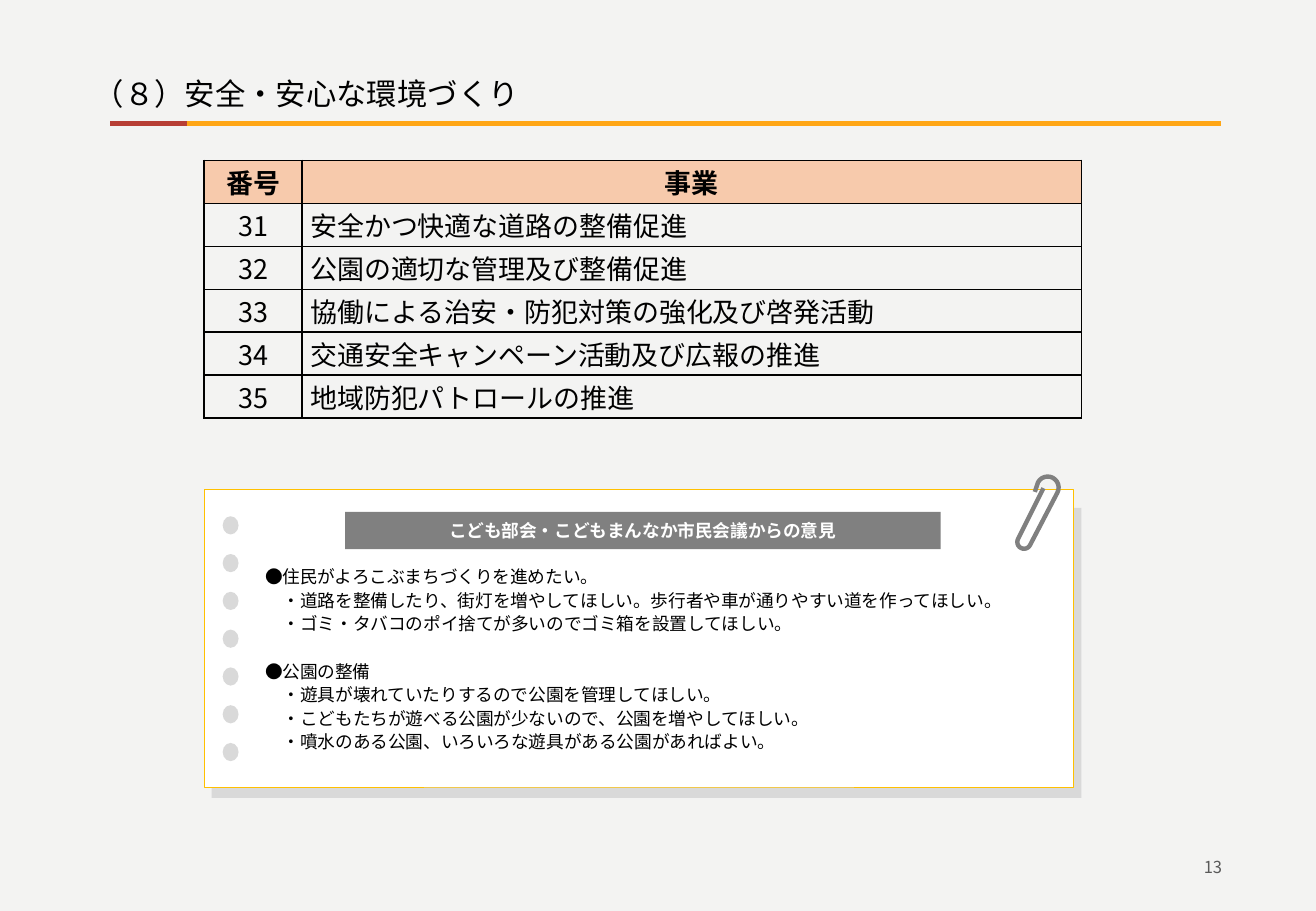
"""Build the slide on safe and secure surroundings."""
import dataclasses
import math

import lxml.etree
import pptx
import pptx.dml.color
import pptx.enum.shapes
import pptx.enum.text
import pptx.oxml.ns
import pptx.util

Pt = pptx.util.Pt
Align = pptx.enum.text.PP_ALIGN
Form = pptx.enum.shapes.MSO_SHAPE


@dataclasses.dataclass(frozen=True)
class Theme:
    back: str = "F3F3F2"
    ink: str = "000000"
    white: str = "FFFFFF"
    gray: str = "808080"
    pale: str = "D9D9D9"
    dim: str = "595959"
    peach: str = "F7CAAC"
    gold: str = "FFC000"
    amber: str = "FFA615"
    red: str = "B73E35"
    main: str = "Noto Sans CJK JP"
    latin: str = "Arial"
    label: str = "Calibri"
    title: float = 18
    table: float = 16
    body: float = 10.5
    number: float = 9.8
    leading: float = 14


def shade(code):
    return pptx.dml.color.RGBColor.from_string(code)


def apply(target, values):
    for name, value in values.items():
        setattr(target, name, value)


def child(parent, tag, **attrs):
    return lxml.etree.SubElement(parent, pptx.oxml.ns.qn(tag), attrs)


class Page:
    def __init__(self, slide, theme):
        self.slide = slide
        self.theme = theme
        self.shapes = slide.shapes
        slide.background.fill.solid()
        slide.background.fill.fore_color.rgb = shade(theme.back)

    def place(self, shape, box):
        apply(shape, dict(zip(("left", "top", "width", "height"), map(Pt, box))))

    def frame(self, frame, anchor="MIDDLE", inset=None):
        values = {"word_wrap": True,
                  "auto_size": pptx.enum.text.MSO_AUTO_SIZE.NONE,
                  "vertical_anchor": getattr(pptx.enum.text.MSO_ANCHOR, anchor)}
        if inset is not None:
            sides = ("left", "top", "right", "bottom")
            values.update({f"margin_{side}": Pt(inset) for side in sides})
        apply(frame, values)

    def text(self, para, words, size, color=None, face=None, bold=False):
        run = para.add_run()
        face = face or self.theme.main
        run.text = words
        apply(run.font, {"size": Pt(size), "bold": bold, "name": face})
        run.font.color.rgb = shade(color or self.theme.ink)
        child(run.font._element, "a:ea", typeface=face)

    def indent(self, para, left, first):
        props = para._p.get_or_add_pPr()
        props.set("marL", str(Pt(left)))
        props.set("indent", str(Pt(first)))

    def title(self, box, parts):
        holder = self.shapes.title
        self.place(holder, box)
        self.frame(holder.text_frame)
        para = holder.text_frame.paragraphs[0]
        para.alignment = Align.LEFT
        self.indent(para, 0, 10.8)
        for words, face in parts:
            self.text(para, words, self.theme.title, face=face)

    def number(self, box, words):
        frame = self.shapes.add_textbox(*map(Pt, box)).text_frame
        self.frame(frame)
        frame.paragraphs[0].alignment = Align.RIGHT
        self.text(frame.paragraphs[0], words, self.theme.number, self.theme.dim)

    def rule(self, start, end, y, color):
        kind = pptx.enum.shapes.MSO_CONNECTOR.STRAIGHT
        rule = self.shapes.add_connector(kind, *map(Pt, (start, y, end, y)))
        rule.line.color.rgb = shade(color)
        rule.line.width = Pt(3)
        child(rule._element.spPr, "a:effectLst")

    def shape(self, form, box, fill, edge=None):
        shape = self.shapes.add_shape(form, *map(Pt, box))
        shape.shadow.inherit = False
        shape.fill.solid()
        shape.fill.fore_color.rgb = shade(fill)
        if edge:
            shape.line.color.rgb = shade(edge)
            shape.line.width = Pt(0.5)
        else:
            shape.line.fill.background()
        return shape

    def banner(self, box, words):
        frame = self.shape(Form.RECTANGLE, box, self.theme.gray).text_frame
        self.frame(frame, inset=0)
        frame.paragraphs[0].alignment = Align.CENTER
        self.text(frame.paragraphs[0], words, self.theme.body,
                  self.theme.white, self.theme.label, True)

    def clip(self, tip, arcs, end):
        points = [tip]
        for x, y, radius, start in arcs:
            for step in range(13):
                angle = math.radians(start + 15 * step)
                points.append((x + radius * math.cos(angle),
                               y + radius * math.sin(angle)))
        points = [(Pt(x), Pt(y)) for x, y in points + [end]]
        maker = self.shapes.build_freeform(*points[0], scale=1)
        maker.add_line_segments(points[1:], close=False)
        wire = maker.convert_to_shape()
        wire.shadow.inherit = False
        wire.fill.background()
        wire.line.color.rgb = shade(self.theme.gray)
        wire.line.width = Pt(2.6)

    def notes(self, box, groups):
        frame = self.shapes.add_textbox(*map(Pt, box)).text_frame
        self.frame(frame, "TOP")
        lines = [(words, spot, group) for group, texts in enumerate(groups)
                 for spot, words in enumerate(texts)]
        for order, (words, spot, group) in enumerate(lines):
            para = frame.add_paragraph() if order else frame.paragraphs[0]
            lead = self.theme.leading
            gap = lead if group and not spot else 0
            apply(para, {"alignment": Align.JUSTIFY, "line_spacing": Pt(lead),
                         "space_before": Pt(gap)})
            if spot:
                self.indent(para, 20, -9.5)
            self.text(para, words, self.theme.body)

    def table(self, box, widths, rows):
        grid = self.shapes.add_table(len(rows), len(widths), *map(Pt, box)).table
        apply(grid, {"horz_banding": False, "first_row": False})
        for column, width in zip(grid.columns, widths):
            column.width = Pt(width)
        for y, texts in enumerate(rows):
            grid.rows[y].height = Pt(box[3] / len(rows))
            for x, words in enumerate(texts):
                self.cell(grid.cell(y, x), words, y == 0, y == 0 or x == 0)

    def cell(self, cell, words, head, center):
        apply(cell, {"margin_left": Pt(5), "margin_right": Pt(5),
                     "margin_top": 0, "margin_bottom": 0,
                     "vertical_anchor": pptx.enum.text.MSO_ANCHOR.MIDDLE})
        props = cell._tc.get_or_add_tcPr()
        for side in ("a:lnL", "a:lnR", "a:lnT", "a:lnB"):
            line = child(props, side, w=str(Pt(1)))
            child(child(line, "a:solidFill"), "a:srgbClr", val=self.theme.ink)
        if head:
            cell.fill.solid()
            cell.fill.fore_color.rgb = shade(self.theme.peach)
        else:
            cell.fill.background()
        para = cell.text_frame.paragraphs[0]
        para.alignment = Align.CENTER if center else Align.LEFT
        self.text(para, words, self.theme.table, bold=head)


def main():
    theme = Theme()
    deck = pptx.Presentation()
    apply(deck, {"slide_width": Pt(780), "slide_height": Pt(540)})
    page = Page(deck.slides.add_slide(deck.slide_layouts[5]), theme)
    page.number((551, 502.5, 180.5, 22.5), "13")
    page.title((37.5, 41, 715, 29),
               [("（", theme.main), ("８）安全・安心な環境づくり", theme.latin)])
    works = ["安全かつ快適な道路の整備促進", "公園の適切な管理及び整備促進",
             "協働による治安・防犯対策の強化及び啓発活動",
             "交通安全キャンペーン活動及び広報の推進", "地域防犯パトロールの推進"]
    rows = [("番号", "事業")]
    rows += [(str(code), work) for code, work in enumerate(works, 31)]
    page.table((121, 95, 520, 153), (58, 462), rows)
    page.rule(67, 723.5, 73, theme.amber)
    page.rule(65.5, 111, 73, theme.red)
    page.shape(Form.RECTANGLE, (125.5, 301, 515.5, 172), theme.pale)
    page.shape(Form.RECTANGLE, (121, 290, 515.5, 176.5), theme.white, theme.gold)
    page.banner((204.5, 303.5, 353, 22), "こども部会・こどもまんなか市民会議からの意見")
    page.clip((613.4, 291.6), [(621, 289, 6.5, 208.6), (607, 321.3, 4, 28.6)],
              (618.5, 289.4))
    for hole in range(7):
        page.shape(Form.OVAL, (132, 306 + 22.4 * hole, 9.4, 10.8), theme.pale)
    page.notes((150, 330.5, 456, 127), [
        ["●住民がよろこぶまちづくりを進めたい。",
         "・道路を整備したり、街灯を増やしてほしい。歩行者や車が通りやすい道を作ってほしい。",
         "・ゴミ・タバコのポイ捨てが多いのでゴミ箱を設置してほしい。"],
        ["●公園の整備",
         "・遊具が壊れていたりするので公園を管理してほしい。",
         "・こどもたちが遊べる公園が少ないので、公園を増やしてほしい。",
         "・噴水のある公園、いろいろな遊具がある公園があればよい。"]])
    deck.save("out.pptx")


if __name__ == "__main__":
    main()
